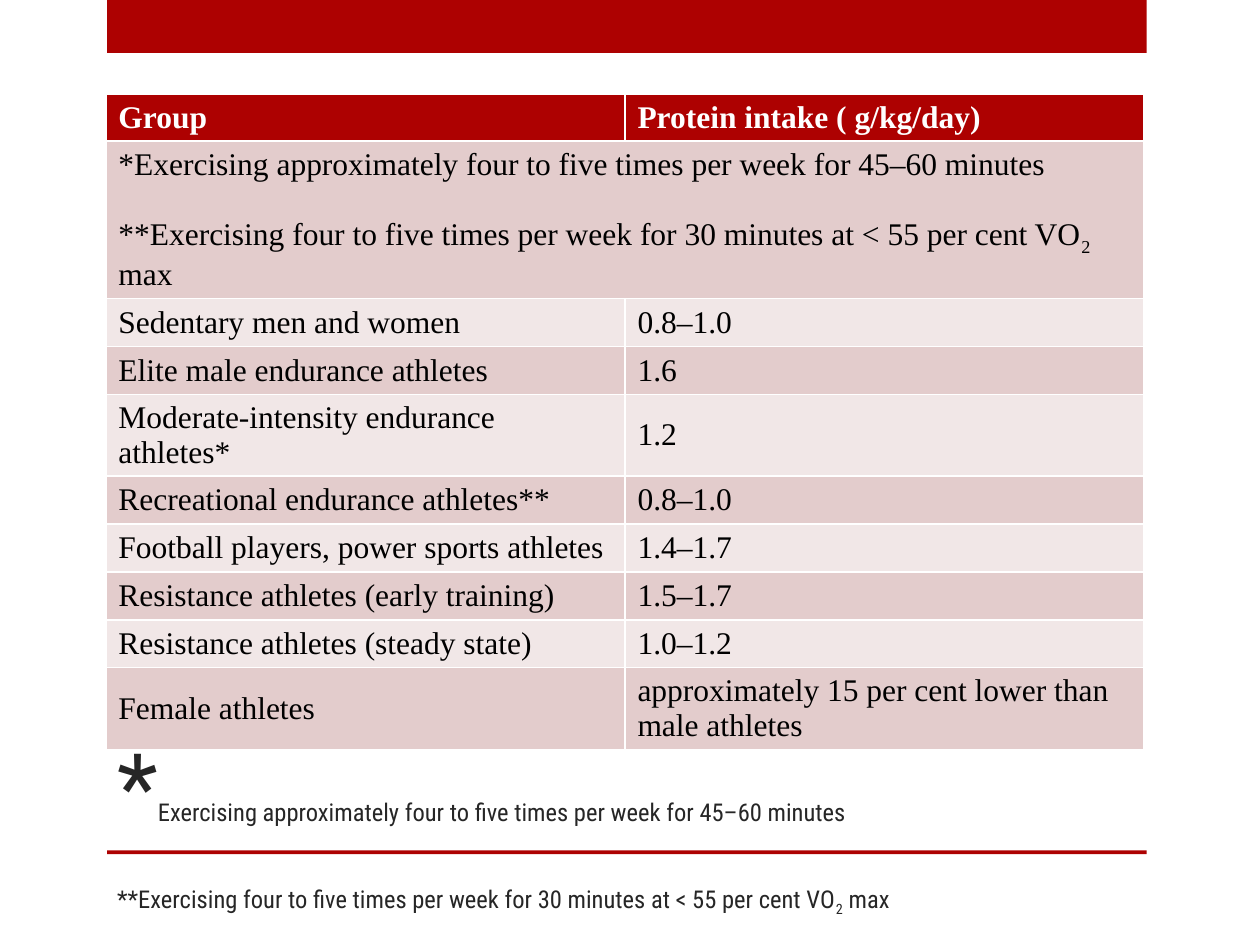
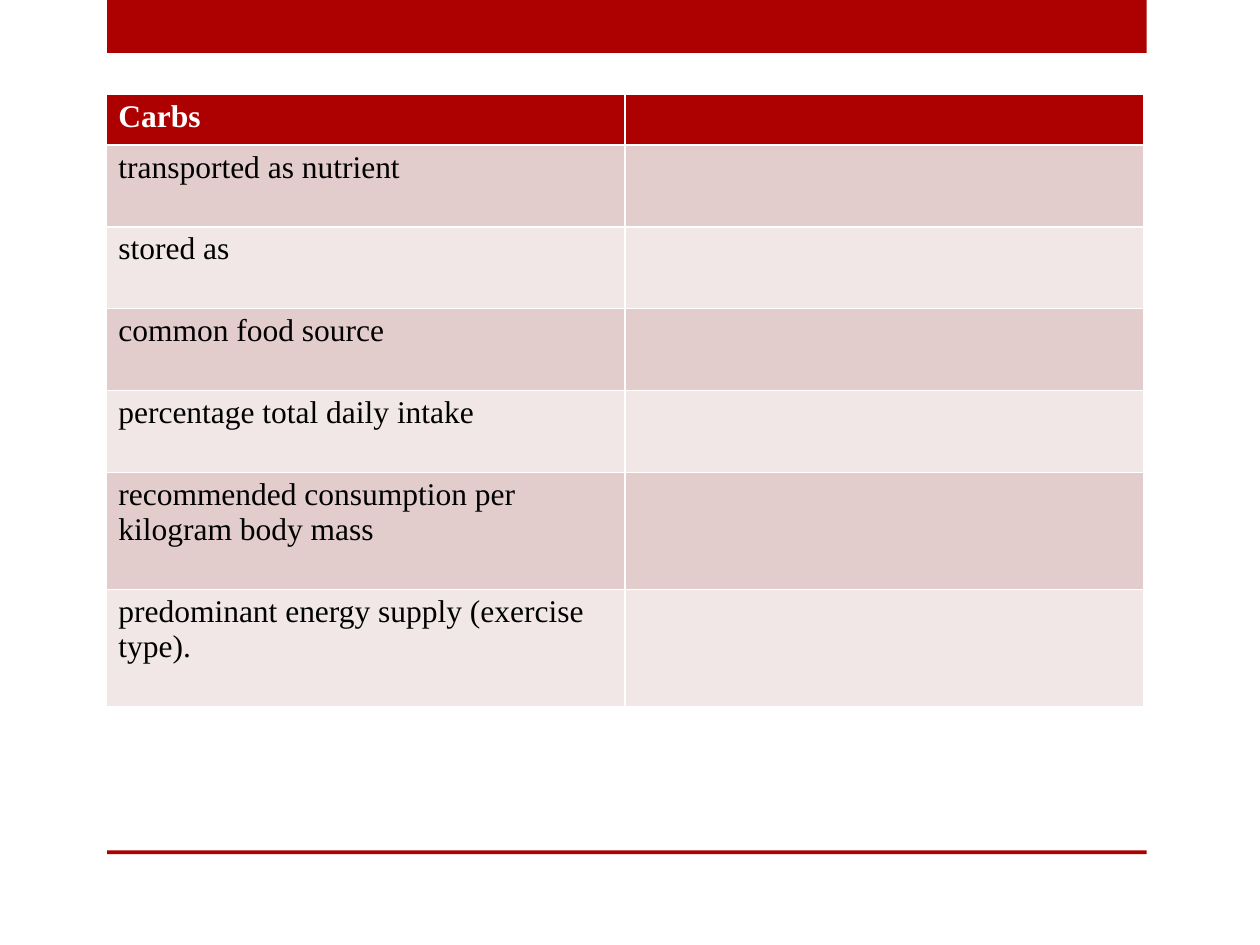
"""Builds two nutrition slides: protein intake by group, and a blank carbohydrate grid."""
from dataclasses import dataclass

from pptx import Presentation
from pptx.dml.color import RGBColor
from pptx.enum.shapes import MSO_SHAPE
from pptx.enum.text import MSO_ANCHOR, MSO_AUTO_SIZE, PP_ALIGN
from pptx.util import Inches, Pt

RECTANGLE = MSO_SHAPE.RECTANGLE
TOP, MIDDLE, BOTTOM = MSO_ANCHOR.TOP, MSO_ANCHOR.MIDDLE, MSO_ANCHOR.BOTTOM
LEFT = PP_ALIGN.LEFT
NO_AUTOFIT = MSO_AUTO_SIZE.NONE


@dataclass(frozen=True)
class Theme:
    red: RGBColor = RGBColor(0xAD, 0x01, 0x01)
    white: RGBColor = RGBColor(0xFF, 0xFF, 0xFF)
    black: RGBColor = RGBColor(0, 0, 0)
    charcoal: RGBColor = RGBColor(0x26, 0x26, 0x26)
    bands: tuple = (RGBColor(0xF1, 0xE7, 0xE7), RGBColor(0xE3, 0xCC, 0xCC))
    table_font: str = "Times New Roman"
    title_font: str = "Roboto Condensed"
    table_size: int = 18
    note_size: int = 14
    star_size: int = 54


THEME = Theme()

MODERATE = "Exercising approximately four to five times per week for 45–60 minutes"
RECREATIONAL = "**Exercising four to five times per week for 30 minutes at < 55 per cent VO"
NOTES = [[("*", "star"), (MODERATE, "")],
         [(RECREATIONAL, ""), ("2", "subscript"), (" max", "")]]

PROTEIN_ROWS = [
    ("Group", "Protein intake ( g/kg/day)", 0.37),
    (None, None, 1.25),
    ("Sedentary men and women", "0.8–1.0", 0.38),
    ("Elite male endurance athletes", "1.6", 0.38),
    ("Moderate-intensity endurance athletes*", "1.2", 0.65),
    ("Recreational endurance athletes**", "0.8–1.0", 0.38),
    ("Football players, power sports athletes", "1.4–1.7", 0.38),
    ("Resistance athletes (early training)", "1.5–1.7", 0.38),
    ("Resistance athletes (steady state)", "1.0–1.2", 0.38),
    ("Female athletes", "approximately 15 per cent lower than male athletes", 0.65),
]
CARBS_ROWS = [
    ("Carbs", "", 0.4),
    ("transported as nutrient", "", 0.65),
    ("stored as", "", 0.65),
    ("common food source", "", 0.65),
    ("percentage total daily intake", "", 0.65),
    ("recommended consumption per kilogram body mass", "", 0.93),
    ("predominant energy supply (exercise type).", "", 0.93),
]
MASTER_BANDS = [(0, 0.42), (6.75, 0.03)]


def style(font, name, size, color, bold=False):
    font.name, font.size, font.bold = name, Pt(size), bold
    font.color.rgb = color


def write_notes(frame, gap, name, size, color):
    """Write both training notes, separated by a gap in points."""
    for index, note in enumerate(NOTES):
        para = frame.add_paragraph() if index else frame.paragraphs[0]
        para.alignment = LEFT
        style(para.font, name, size, color)
        if index:
            para.space_before = Pt(gap)
        for text, role in note:
            span = para.add_run()
            span.text = text
            if role == "star" and frame_is_title(size):
                span.font.size = Pt(THEME.star_size)
            if role == "subscript":
                span.font.size = Pt(size)
                span._r.get_or_add_rPr().set("baseline", "-25000")


def frame_is_title(size):
    return size == THEME.note_size


def add_master_bands(deck, page):
    """Draw the red bands and move them to the master that every slide shares."""
    for top, height in MASTER_BANDS:
        band = page.shapes.add_shape(RECTANGLE, Inches(0.85), Inches(top),
                                     Inches(8.25), Inches(height))
        band.shadow.inherit = False
        band.fill.solid()
        band.fill.fore_color.rgb = THEME.red
        band.line.fill.background()
        deck.slide_master.shapes.element.append(band.element)


def add_grid(page, rows, anchor):
    """Add a two-column banded table and return it."""
    total = sum(row[-1] for row in rows)
    table = page.shapes.add_table(len(rows), 2, Inches(0.84), Inches(0.75),
                                  Inches(8.24), Inches(total)).table
    for index, (*texts, height) in enumerate(rows):
        table.rows[index].height = Inches(height)
        for column, text in enumerate(texts):
            cell = table.cell(index, column)
            cell.vertical_anchor = anchor
            cell.margin_left = cell.margin_right = Inches(0.1)
            cell.margin_top = cell.margin_bottom = Inches(0.04)
            cell.fill.solid()
            cell.fill.fore_color.rgb = THEME.bands[index % 2] if index else THEME.red
            if text:
                cell.text = text
                style(cell.text_frame.paragraphs[0].font, THEME.table_font, THEME.table_size,
                      THEME.black if index else THEME.white, bold=index == 0)
    return table


def add_protein_slide(page):
    title = page.shapes.title
    title.left, title.top = Inches(0.83), Inches(5.58)
    title.width, title.height = Inches(7.42), Inches(1.75)
    frame = title.text_frame
    frame.word_wrap, frame.auto_size, frame.vertical_anchor = True, NO_AUTOFIT, BOTTOM
    write_notes(frame, 25, THEME.title_font, THEME.note_size, THEME.charcoal)

    table = add_grid(page, PROTEIN_ROWS, MIDDLE)
    merged = table.cell(1, 0)
    merged.merge(table.cell(1, 1))
    write_notes(merged.text_frame, 20, THEME.table_font, THEME.table_size, THEME.black)


def main():
    deck = Presentation()
    deck.slide_width, deck.slide_height = Inches(10), Inches(7.5)
    title_only, blank = deck.slide_layouts[5], deck.slide_layouts[6]
    protein_page = deck.slides.add_slide(title_only)
    add_master_bands(deck, protein_page)
    add_protein_slide(protein_page)
    add_grid(deck.slides.add_slide(blank), CARBS_ROWS, TOP)
    deck.save("out.pptx")


if __name__ == "__main__":
    main()
